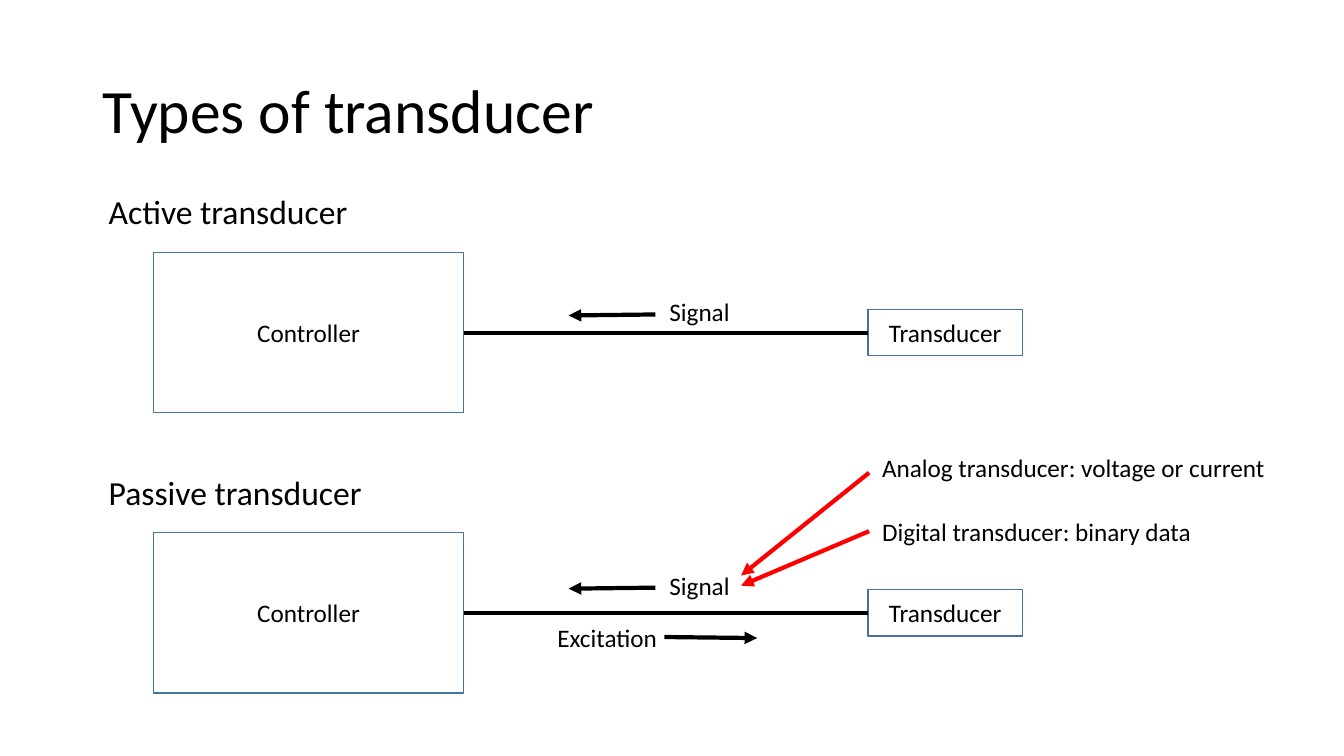
from lxml import etree
from pptx import Presentation
from pptx.dml.color import RGBColor
from pptx.enum import shapes, text as txt
from pptx.oxml import ns
from pptx.util import Inches, Pt

COLORS = {"ink": "000000", "paper": "FFFFFF", "border": "43739E", "accent": "FF0000"}


def write(s, text, size=18, align=txt.PP_ALIGN.LEFT, anchor=txt.MSO_ANCHOR.TOP, wrap=True, spacing=None):
    tf = s.text_frame
    tf.word_wrap = wrap
    tf.vertical_anchor = anchor
    p = tf.paragraphs[0]
    p.alignment = align
    p.line_spacing = spacing
    r = p.add_run()
    r.text = text
    r.font.size = Pt(size)
    r.font.name = "Calibri"
    r.font.color.rgb = RGBColor.from_string(COLORS["ink"])


def draw_line(start, end, color="ink", arrow=True):
    c = sl.shapes.add_connector(shapes.MSO_CONNECTOR.STRAIGHT, *map(Inches, start + end))
    c.line.width = Pt(3)
    c.line.color.rgb = RGBColor.from_string(COLORS[color])
    if arrow:
        etree.SubElement(c.line._get_or_add_ln(), ns.qn("a:tailEnd"), type="triangle")
    etree.SubElement(c._element.spPr, ns.qn("a:effectLst"))
    return c


prs = Presentation()
prs.slide_width, prs.slide_height = Inches(13.33), Inches(7.5)
sl = prs.slides.add_slide(prs.slide_layouts[5])

title = sl.shapes.title
title.left, title.top, title.width, title.height = map(Inches, (0.92, 0.4, 11.5, 1.45))
write(title, "Types of transducer", size=44, anchor=txt.MSO_ANCHOR.MIDDLE, spacing=0.9)

for axis, signal_y in ((3.3, 3.12), (6.08, 5.83)):
    boxes = []
    for name, left, width, height in (("Controller", 1.52, 3.08, 1.59), ("Transducer", 8.61, 1.53, 0.46)):
        box = sl.shapes.add_shape(shapes.MSO_SHAPE.RECTANGLE, Inches(left), Inches(axis - height / 2),
                                  Inches(width), Inches(height))
        box.shadow.inherit = False
        box.fill.solid()
        box.fill.fore_color.rgb = RGBColor.from_string(COLORS["paper"])
        box.line.color.rgb = RGBColor.from_string(COLORS["border"])
        box.line.width = Pt(1)
        write(box, name, align=txt.PP_ALIGN.CENTER, anchor=txt.MSO_ANCHOR.MIDDLE)
        boxes.append(box)
    cable = draw_line((4.6, axis), (8.61, axis), arrow=False)
    cable.begin_connect(boxes[0], 3)
    cable.end_connect(boxes[1], 1)
    draw_line((6.5, signal_y), (5.64, signal_y + 0.01))

draw_line((6.59, 6.32), (7.51, 6.33))
for start_y, end_y in ((4.69, 5.71), (5.27, 5.81)):
    draw_line((8.62, start_y), (7.35, end_y), color="accent")

labels = [
    ("Active transducer", 0.98, 1.84, 2.6, 0.5, 24),
    ("Passive transducer", 0.98, 4.63, 2.74, 0.5, 24),
    ("Signal", 6.54, 2.89, 0.81, 0.4, 18),
    ("Signal", 6.54, 5.61, 0.81, 0.4, 18),
    ("Excitation", 5.43, 6.12, 1.2, 0.4, 18),
    ("Analog transducer: voltage or current", 8.65, 4.44, 4.04, 0.4, 18),
    ("Digital transducer: binary data", 8.65, 5.07, 3.3, 0.4, 18),
]
for label, *place, size in labels:
    tb = sl.shapes.add_textbox(*map(Inches, place))
    write(tb, label, size=size, wrap=False)
    tb.text_frame.auto_size = txt.MSO_AUTO_SIZE.SHAPE_TO_FIT_TEXT

prs.save("out.pptx")
